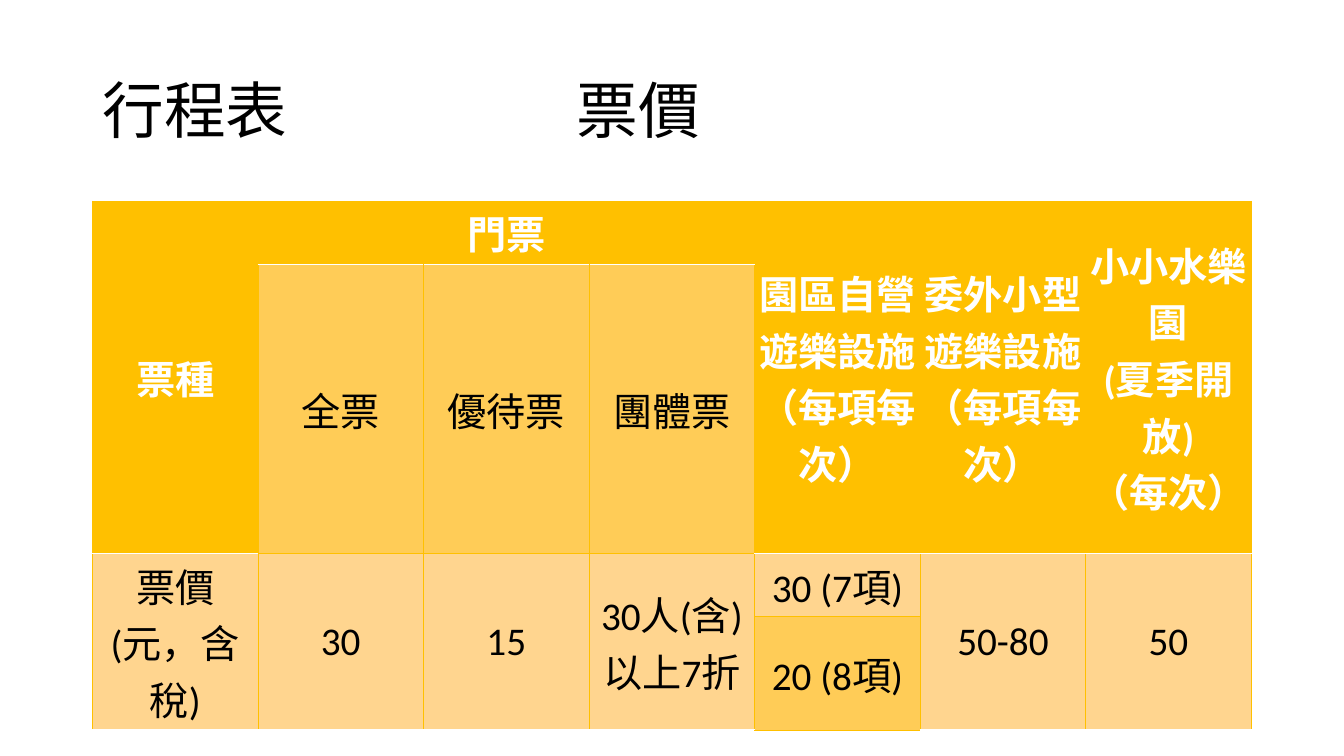
import pptx
import pptx.dml.color
import pptx.enum.text
import pptx.oxml
import pptx.oxml.ns
import pptx.util
from pptx.util import Cm

COLORS = {"gold": "FFC000", "amber": "FFCC57", "cream": "FFD58F",
          "white": "FFFFFF", "black": "000000"}
FORMATS = {
    "title": {"size": pptx.util.Pt(44), "name": "Calibri", "bold": False},
    "header": {"size": pptx.util.Pt(28), "name": "Calibri", "bold": True},
    "body": {"size": pptx.util.Pt(28), "name": "Calibri", "bold": False},
}

# Each entry: row, column, row span, column span, wording, fill
TICKETS = [
    (0, 0, 2, 1, "票種", "gold"),
    (0, 1, 1, 3, "門票", "gold"),
    (0, 4, 2, 1, "園區自營遊樂設施\v（每項每次）", "gold"),
    (0, 5, 2, 1, "委外小型遊樂設施\v（每項每次）", "gold"),
    (0, 6, 2, 1, "小小水樂園\v(夏季開放)\v（每次）", "gold"),
    (1, 1, 1, 1, "全票", "amber"),
    (1, 2, 1, 1, "優待票", "amber"),
    (1, 3, 1, 1, "團體票", "amber"),
    (2, 0, 2, 1, "票價\v(元，含稅)", "cream"),
    (2, 1, 2, 1, "30", "cream"),
    (2, 2, 2, 1, "15", "cream"),
    (2, 3, 2, 1, "30人(含)\v以上7折", "cream"),
    (2, 4, 1, 1, "30 (7項)", "cream"),
    (3, 4, 1, 1, "20 (8項)", "amber"),
    (2, 5, 2, 1, "50-80", "cream"),
    (2, 6, 2, 1, "50", "cream"),
]
ROW_HEIGHTS = [1.04, 1.04, 0.84, 0.84]
COLUMN_COUNT = 7


class TicketSlide:
    def __init__(self, deck):
        self.slide = deck.slides.add_slide(deck.slide_layouts[5])

    def style(self, font, format_name, color):
        for attribute, value in FORMATS[format_name].items():
            setattr(font, attribute, value)
        font.color.rgb = pptx.dml.color.RGBColor.from_string(COLORS[color])

    def title(self, wording, tab_position):
        title = self.slide.shapes.title
        title.left, title.top, title.width, title.height = Cm(2.33), Cm(1.01), Cm(29.21), Cm(3.68)
        frame = title.text_frame
        frame.text = wording
        frame.auto_size = pptx.enum.text.MSO_AUTO_SIZE.NONE
        frame.vertical_anchor = pptx.enum.text.MSO_ANCHOR.MIDDLE
        heading = frame.paragraphs[0]
        heading.alignment = pptx.enum.text.PP_ALIGN.LEFT
        heading.line_spacing = 0.9
        heading._p.get_or_add_pPr().append(pptx.oxml.parse_xml(
            f'<a:tabLst {pptx.oxml.ns.nsdecls("a")}>'
            f'<a:tab pos="{tab_position}" algn="l"/></a:tabLst>'))
        self.style(heading.runs[0].font, "title", "black")

    def border(self, cell, side, color, width):
        cell._tc.get_or_add_tcPr().append(pptx.oxml.parse_xml(
            f'<a:ln{side} {pptx.oxml.ns.nsdecls("a")} w="{pptx.util.Pt(width)}">'
            f'<a:solidFill><a:srgbClr val="{COLORS[color]}"/></a:solidFill></a:ln{side}>'))

    def ticket_cell(self, table, row, column, row_span, column_span, wording, fill):
        last_row, last_column = row + row_span - 1, column + column_span - 1
        cell = table.cell(row, column)
        if row_span * column_span > 1:
            cell.merge(table.cell(last_row, last_column))
        header = fill == "gold"
        white_above = row == 1 or (row == 2 and column not in (1, 2, 3))

        # Borders and fill cover every grid cell of the span
        for r in range(row, last_row + 1):
            for c in range(column, last_column + 1):
                part = table.cell(r, c)
                if c == column:
                    self.border(part, "L", "gold", 0.5)
                if c == last_column:
                    self.border(part, "R", "gold", 0.5)
                if r == row:
                    self.border(part, "T", *(("white", 1) if white_above else ("gold", 0.5)))
                if r == last_row:
                    self.border(part, "B", *(("white", 1) if header else ("gold", 0.5)))
                part.fill.solid()
                part.fill.fore_color.rgb = pptx.dml.color.RGBColor.from_string(COLORS[fill])

        # Wording
        cell.text = wording
        cell.vertical_anchor = pptx.enum.text.MSO_ANCHOR.MIDDLE
        for side in ("left", "right", "top", "bottom"):
            setattr(cell, f"margin_{side}", Cm(0.08))
        paragraph = cell.text_frame.paragraphs[0]
        paragraph.alignment = pptx.enum.text.PP_ALIGN.CENTER
        for run in paragraph.runs:
            self.style(run.font, "header" if header else "body", "white" if header else "black")

    def ticket_table(self):
        table = self.slide.shapes.add_table(
            len(ROW_HEIGHTS), COLUMN_COUNT, Cm(2.33), Cm(5.07), Cm(29.21), Cm(9.8)).table
        table.horz_banding = False
        table.first_row = False
        for row, height in zip(table.rows, ROW_HEIGHTS):
            row.height = Cm(height)
        for ticket in TICKETS:
            self.ticket_cell(table, *ticket)


def main():
    deck = pptx.Presentation()
    deck.slide_width, deck.slide_height = Cm(33.87), Cm(19.05)
    page = TicketSlide(deck)
    page.title("行程表\t票價", Cm(11.95))
    page.ticket_table()
    deck.save("out.pptx")


if __name__ == "__main__":
    main()
